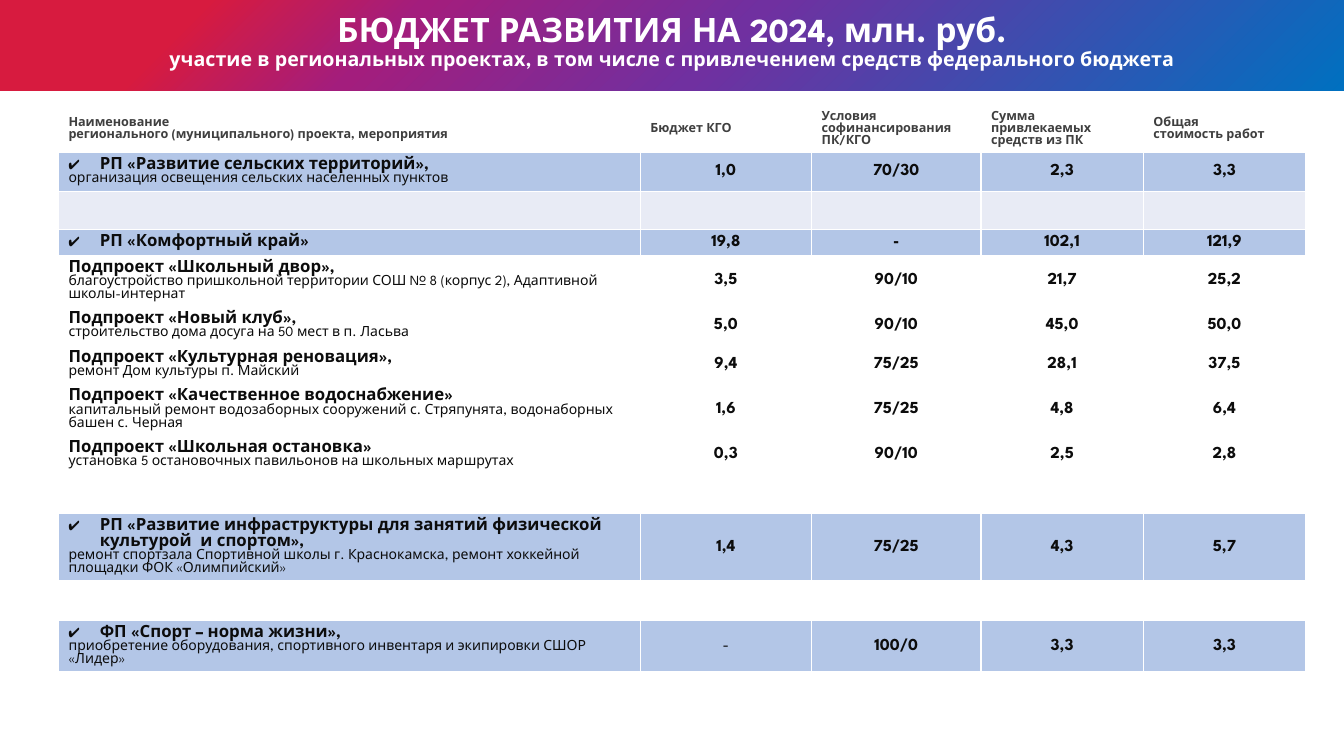
from lxml import etree
from pptx import Presentation
from pptx.dml.color import RGBColor
from pptx.enum.text import MSO_ANCHOR as Anchor, MSO_AUTO_SIZE as AutoSize, PP_ALIGN as Align
from pptx.oxml import parse_xml
from pptx.oxml.ns import nsdecls
from pptx.util import Inches, Pt

FONT = "League Spartan"
WHITE = RGBColor(0xFF, 0xFF, 0xFF)
GRAY = RGBColor(0x3F, 0x3F, 0x3F)
BLACK = RGBColor(0x0C, 0x0C, 0x0C)
BLUE = RGBColor(0xB3, 0xC6, 0xE7)
PALE = RGBColor(0xE8, 0xEB, 0xF5)
GRADIENT = [(0, RGBColor(0x00, 0x70, 0xC0)), (46, RGBColor(0x70, 0x30, 0xA0)),
            (70, RGBColor(0xA3, 0x1D, 0x7D)), (85, RGBColor(0xD7, 0x1B, 0x3F)),
            (100, RGBColor(0xD7, 0x1B, 0x3F))]

HEADER = ["Наименование\nрегионального (муниципального) проекта, мероприятия", "Бюджет КГО",
          "Условия софинансирования\nПК/КГО", "Сумма привлекаемых средств из ПК",
          "Общая\nстоимость работ"]
COLUMN_WIDTHS = [5.77, 1.7, 1.68, 1.61, 1.61]

# Row height, fill, name, description, values
ROWS = [
    (0.39, BLUE, "РП «Развитие сельских территорий»,",
     "организация освещения сельских населенных пунктов", ["1,0", "70/30", "2,3", "3,3"]),
    (0.38, PALE, "", "", [""] * 4),
    (0.25, BLUE, "РП «Комфортный край»", "", ["19,8", "-", "102,1", "121,9"]),
    (0.5, WHITE, "Подпроект «Школьный двор»,",
     "благоустройство пришкольной территории СОШ № 8 (корпус 2), Адаптивной школы-интернат",
     ["3,5", "90/10", "21,7", "25,2"]),
    (0.38, WHITE, "Подпроект «Новый клуб»,",
     "строительство дома досуга на 50 мест в п. Ласьва", ["5,0", "90/10", "45,0", "50,0"]),
    (0.39, WHITE, "Подпроект «Культурная реновация»,",
     "ремонт Дом культуры п. Майский", ["9,4", "75/25", "28,1", "37,5"]),
    (0.5, WHITE, "Подпроект «Качественное водоснабжение»",
     "капитальный ремонт водозаборных сооружений с. Стряпунята, водонаборных башен с. Черная",
     ["1,6", "75/25", "4,8", "6,4"]),
    (0.38, WHITE, "Подпроект «Школьная остановка»",
     "установка 5 остановочных павильонов на школьных маршрутах",
     ["0,3", "90/10", "2,5", "2,8"]),
    (0.4, WHITE, "", "", [""] * 4),
    (0.64, BLUE, "РП «Развитие инфраструктуры для занятий физической культурой  и спортом»,",
     "ремонт спортзала Спортивной школы г. Краснокамска, ремонт хоккейной площадки "
     "ФОК «Олимпийский»", ["1,4", "75/25", "4,3", "5,7"]),
    (0.4, WHITE, "", "", [""] * 4),
    (0.5, BLUE, "ФП «Спорт – норма жизни»,",
     "приобретение оборудования, спортивного инвентаря и экипировки СШОР «Лидер»",
     ["-", "100/0", "3,3", "3,3"]),
]


def write_lines(frame, lines, align):
    """Write (text, size, bold, color) lines, one paragraph each."""
    for index, (text, size, bold, color) in enumerate(lines):
        paragraph = frame.paragraphs[0] if index == 0 else frame.add_paragraph()
        paragraph.alignment = align
        run = paragraph.add_run()
        run.text = text
        run.font.color.rgb = color
        for name, value in {"name": FONT, "size": Pt(size), "bold": bold}.items():
            setattr(run.font, name, value)


def fill_cell(cell, lines, align, color):
    """Give a cell its white borders, fill and text."""
    properties = cell._tc.get_or_add_tcPr()
    for side in ("lnL", "lnR", "lnT", "lnB"):
        properties.append(parse_xml(
            f'<a:{side} {nsdecls("a")} w="12700"><a:solidFill>'
            f'<a:srgbClr val="{WHITE}"/></a:solidFill></a:{side}>'))
    cell.fill.solid()
    cell.fill.fore_color.rgb = color
    cell.vertical_anchor = Anchor.MIDDLE
    if lines:
        write_lines(cell.text_frame, lines, align)
    else:
        cell.text_frame.paragraphs[0]._p.get_or_add_endParaRPr().set("sz", "1200")


presentation = Presentation()
presentation.slide_width, presentation.slide_height = Inches(13.33), Inches(7.5)
slide = presentation.slides.add_slide(presentation.slide_layouts[5])

# Title band with a radial gradient
title = slide.shapes.title
for name, value in {"left": 0, "top": -0.07, "width": 13.33, "height": 0.97}.items():
    setattr(title, name, Inches(value))
stops = "".join(f'<a:gs pos="{place * 1000}"><a:srgbClr val="{color}"/></a:gs>'
                for place, color in GRADIENT)
title._element.spPr.append(parse_xml(
    f'<a:gradFill {nsdecls("a")} rotWithShape="1"><a:gsLst>{stops}</a:gsLst>'
    '<a:path path="circle"><a:fillToRect l="100000" t="100000"/></a:path></a:gradFill>'))
frame = title.text_frame
for name, value in {"word_wrap": True, "auto_size": AutoSize.NONE,
                    "vertical_anchor": Anchor.MIDDLE}.items():
    setattr(frame, name, value)
write_lines(frame, [
    ("БЮДЖЕТ РАЗВИТИЯ НА 2024, млн. руб.", 24, True, WHITE),
    ("участие в региональных проектах, в том числе с привлечением средств федерального бюджета",
     14, True, WHITE)], Align.CENTER)
for paragraph in frame.paragraphs:
    paragraph.line_spacing = 0.9
    paragraph.space_before = Pt(0)

# Table grid
heights = [0.45] + [row[0] for row in ROWS]
table = slide.shapes.add_table(len(heights), len(COLUMN_WIDTHS), Inches(0.58), Inches(1.06),
                               Inches(sum(COLUMN_WIDTHS)), Inches(sum(heights))).table
table.first_row = table.horz_banding = False
for column, width in zip(table.columns, COLUMN_WIDTHS):
    column.width = Inches(width)
for row, height in zip(table.rows, heights):
    row.height = Inches(height)

# Header row
for column, text in enumerate(HEADER):
    lines = [(line, 9, True, GRAY) for line in text.split("\n")]
    fill_cell(table.cell(0, column), lines, Align.LEFT, WHITE)

# Project rows
for index, (height, color, project, description, values) in enumerate(ROWS, start=1):
    project_cell = table.cell(index, 0)
    lines = [(project, 12, True, BLACK), (description, 10, False, BLACK)]
    fill_cell(project_cell, [line for line in lines if line[0]], Align.LEFT, color)
    for column, value in enumerate(values, start=1):
        bold = (project, column) != ("ФП «Спорт – норма жизни»,", 1)
        lines = [(value, 12, bold, BLACK)] if value else []
        fill_cell(table.cell(index, column), lines, Align.CENTER, color)

    # Check mark before each main project
    if color == BLUE:
        bullet = project_cell.text_frame.paragraphs[0]._p.get_or_add_pPr()
        bullet.set("marL", str(Inches(0.31)))
        bullet.set("indent", str(Inches(-0.31)))
        bullet_color = etree.SubElement(bullet, bullet.tag.replace("pPr", "buClr"))
        etree.SubElement(bullet_color, bullet.tag.replace("pPr", "srgbClr"), val=str(BLACK))
        etree.SubElement(bullet, bullet.tag.replace("pPr", "buChar"), char="✔")

presentation.save("out.pptx")
